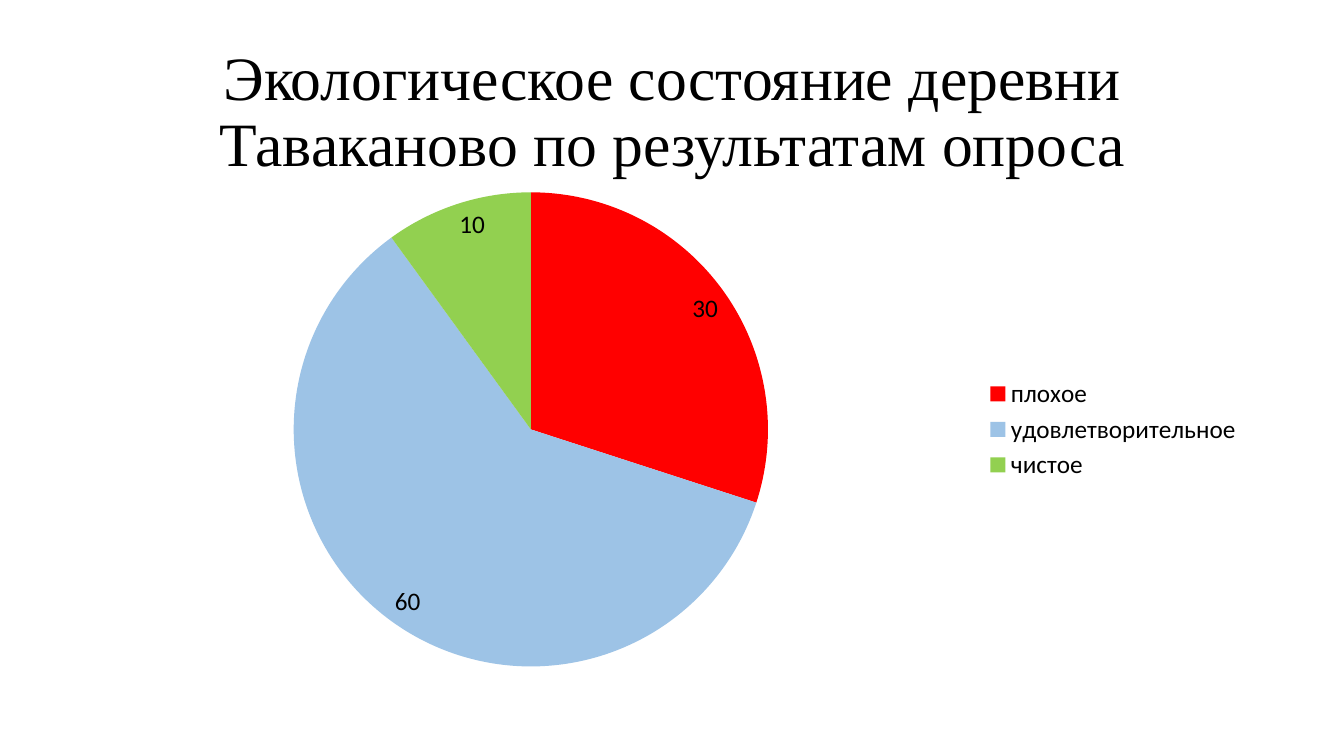
from pptx import Presentation
from pptx.chart.data import CategoryChartData
from pptx.dml.color import RGBColor
from pptx.enum.chart import XL_CHART_TYPE as Kind, XL_LABEL_POSITION as Spot, XL_LEGEND_POSITION as Side
from pptx.enum.text import MSO_ANCHOR as Anchor, PP_ALIGN as Align
from pptx.util import Inches, Pt

SHARES = [
    ("плохое ", 30, "FF0000"),
    ("удовлетворительное", 60, "9DC3E6"),
    ("чистое", 10, "92D050"),
]


def color(fmt, code):
    fmt.rgb = RGBColor.from_string(code)


def style(font, name, size):
    font.name = name
    font.size = Pt(size)
    color(font.color, "000000")


def add_title(slide, text, *box):
    frame = slide.shapes.add_textbox(*map(Inches, box)).text_frame
    frame.word_wrap = True
    frame.vertical_anchor = Anchor.MIDDLE
    para = frame.paragraphs[0]
    para.alignment = Align.CENTER
    para.line_spacing = 0.9
    run = para.add_run()
    run.text = text
    style(run.font, "Times New Roman", 44)


def add_pie(slide, shares, *box):
    names, values, codes = zip(*shares)
    data = CategoryChartData()
    data.categories = names
    data.add_series("Series 1", values)
    chart = slide.shapes.add_chart(Kind.PIE, *map(Inches, box), data).chart
    chart.has_title = False
    style(chart.font, "Calibri", 18)
    chart.has_legend = True
    chart.legend.position = Side.RIGHT
    chart.legend.include_in_layout = False
    plot = chart.plots[0]
    plot.vary_by_categories = True
    plot.has_data_labels = True
    labels = plot.data_labels
    labels.show_value = True
    labels.show_percentage = False
    labels.position = Spot.INSIDE_END
    style(labels.font, "Calibri", 18)
    for i, code in enumerate(codes):
        fill = plot.series[0].points[i].format.fill
        fill.solid()
        color(fill.fore_color, code)


def main():
    deck = Presentation()
    deck.slide_width = Inches(13.33)
    deck.slide_height = Inches(7.5)
    slide = deck.slides.add_slide(deck.slide_layouts[6])
    add_title(slide, "Экологическое состояние деревни Таваканово по результатам опроса",
              0.92, 0.4, 11.5, 1.45)
    add_pie(slide, SHARES, 0.79, 1.77, 11.63, 4.98)
    deck.save("out.pptx")


if __name__ == "__main__":
    main()
